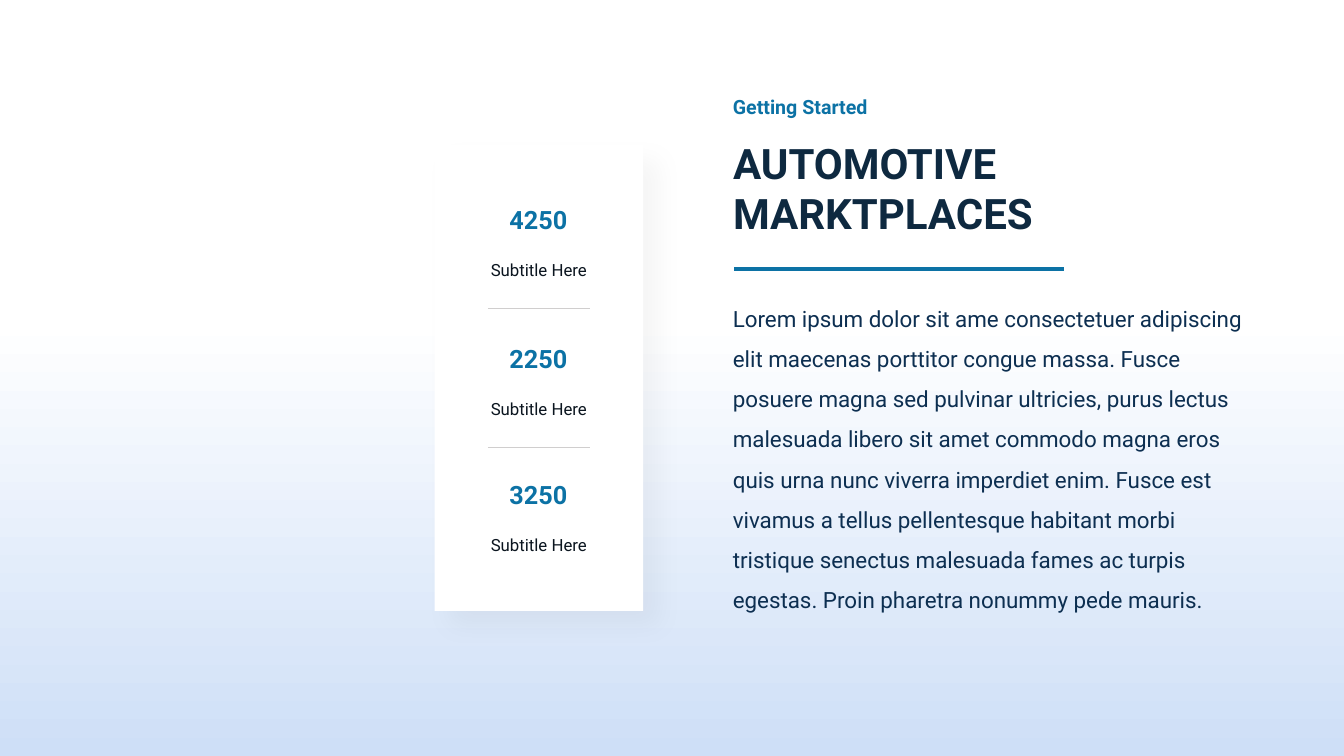
from dataclasses import dataclass

from lxml.etree import SubElement
from pptx import Presentation
from pptx.dml.color import RGBColor
from pptx.enum.shapes import MSO_CONNECTOR, MSO_SHAPE
from pptx.enum.text import MSO_ANCHOR, MSO_AUTO_SIZE, PP_ALIGN
from pptx.oxml.ns import qn
from pptx.util import Inches, Pt


@dataclass(frozen=True)
class Theme:
    font: str = "Roboto"
    white: str = "FFFFFF"
    sky: str = "CEDFF7"
    accent: str = "0C72A5"
    heading: str = "0E2940"
    body: str = "0D2F51"
    caption: str = "0B151F"
    divider: str = "D0CECE"
    shadow: str = "000000"
    title_size: int = 30
    value_size: int = 18
    body_size: int = 16
    kicker_size: int = 14
    caption_size: int = 12


def write(shape, text, *, font, size, color, bold=False, align=PP_ALIGN.LEFT, spacing=1.0):
    tf = shape.text_frame
    tf.word_wrap = True
    tf.auto_size = MSO_AUTO_SIZE.NONE
    tf.vertical_anchor = MSO_ANCHOR.TOP
    p = tf.paragraphs[0]
    p.alignment = align
    p.line_spacing = spacing
    r = p.add_run()
    r.text = text
    r.font.name = font
    r.font.size = Pt(size)
    r.font.bold = bold
    r.font.color.rgb = RGBColor.from_string(color)


class SlideBuilder:
    def __init__(self, prs, theme):
        self.theme = theme
        self.s = prs.slides.add_slide(prs.slide_layouts[5])

    def background(self):
        fill = self.s.background.fill
        fill.gradient()
        fill.gradient_angle = 270
        stops = ((0.42, self.theme.white), (1, self.theme.sky))
        for stop, (position, color) in zip(fill.gradient_stops, stops):
            stop.position = position
            stop.color.rgb = RGBColor.from_string(color)

    def card(self, x, y, w, h):
        """Add a white panel with a soft shadow to the lower right."""
        sp = self.s.shapes.add_shape(
            MSO_SHAPE.ROUNDED_RECTANGLE, Inches(x), Inches(y), Inches(w), Inches(h))
        sp.adjustments[0] = 0
        sp.fill.solid()
        sp.fill.fore_color.rgb = RGBColor.from_string(self.theme.white)
        sp.line.fill.background()
        sp.shadow.inherit = False
        effects = sp._element.spPr.find(qn("a:effectLst"))
        shadow = SubElement(effects, qn("a:outerShdw"), blurRad=str(Pt(18)),
                            dist=str(Pt(15)), dir=str(45 * 60000),
                            algn="tl", rotWithShape="0")
        color = SubElement(shadow, qn("a:srgbClr"), val=self.theme.shadow)
        SubElement(color, qn("a:alpha"), val="4000")

    def title(self, text, x, y, w, h, **style):
        sp = self.s.shapes.title
        sp.left, sp.top, sp.width, sp.height = (Inches(v) for v in (x, y, w, h))
        write(sp, text, font=self.theme.font, **style)

    def text(self, text, x, y, w, h, **style):
        sp = self.s.shapes.add_textbox(Inches(x), Inches(y), Inches(w), Inches(h))
        write(sp, text, font=self.theme.font, **style)

    def rule(self, x1, x2, y, color, width):
        line = self.s.shapes.add_connector(
            MSO_CONNECTOR.STRAIGHT, Inches(x1), Inches(y), Inches(x2), Inches(y))
        line.line.color.rgb = RGBColor.from_string(color)
        line.line.width = Pt(width)
        SubElement(line._element.spPr, qn("a:effectLst"))

    def statistic(self, value, caption, y):
        t = self.theme
        self.text(value, 4.77, y, 1.14, 0.4, size=t.value_size, color=t.accent,
                  bold=True, align=PP_ALIGN.CENTER)
        self.text(caption, 4.71, y + 0.55, 1.27, 0.3, size=t.caption_size,
                  color=t.caption, align=PP_ALIGN.CENTER)


def main():
    prs = Presentation()
    prs.slide_width, prs.slide_height = Inches(13.33), Inches(7.5)
    t = Theme()
    b = SlideBuilder(prs, t)
    b.background()

    b.card(4.31, 1.44, 2.07, 4.62)
    statistics = (("4250", 1.98), ("2250", 3.36), ("3250", 4.71))
    for value, y in statistics:
        b.statistic(value, "Subtitle Here", y)
    for _, y in statistics[:-1]:
        b.rule(4.84, 5.85, y + 1.08, t.divider, 0.75)

    b.title("AUTOMOTIVE MARKTPLACES", 7.17, 1.31, 5.12, 1.11,
            size=t.title_size, color=t.heading, bold=True)
    b.text("Getting Started", 7.17, 0.89, 3.37, 0.34,
           size=t.kicker_size, color=t.accent, bold=True)
    b.text("Lorem ipsum dolor sit ame consectetuer adipiscing elit maecenas "
           "porttitor congue massa. Fusce posuere magna sed pulvinar ultricies, "
           "purus lectus malesuada libero sit amet commodo magna eros quis urna "
           "nunc viverra imperdiet enim. Fusce est vivamus a tellus pellentesque "
           "habitant morbi tristique senectus malesuada fames ac turpis egestas. "
           "Proin pharetra nonummy pede mauris.",
           7.17, 2.84, 5.4, 3.33, size=t.body_size, color=t.body, spacing=1.5)
    b.rule(7.28, 10.55, 2.67, t.accent, 3)

    prs.save("out.pptx")


if __name__ == "__main__":
    main()
